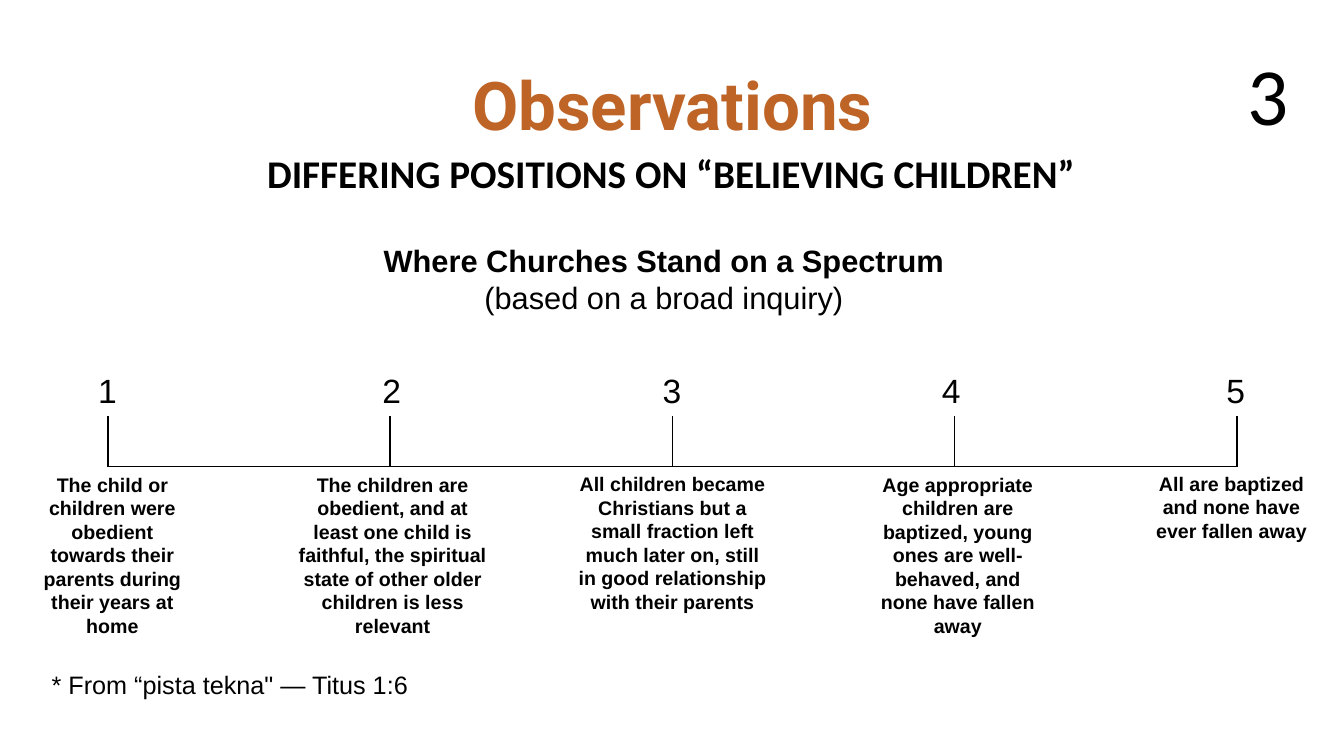
from pptx import Presentation
from pptx import util as u
from pptx.dml.color import RGBColor
from pptx.enum import shapes, text
from pptx.oxml import xmlchemy

PX = 9144
INK = "000000"
RUST = "BE6427"

STEPS = [
    (0, -73, 155, 171, ["The child or children were obedient",
                        "towards their parents during their years at home"]),
    (2, -94, 193, 171, ["The children are obedient, and at least one child is faithful, "
                        "the spiritual state of other older children is less relevant"]),
    (0, -99, 198, 147, ["All children became Christians but a small fraction left much "
                        "later on, still in good relationship with their parents"]),
    (-3, -87, 180, 171, ["Age appropriate children are baptized, young ones are "
                         "well-behaved, and none have fallen away"]),
    (-1, -91, 171, 76, ["All are baptized and none have ever fallen away"]),
]


def px(n):
    return u.Emu(int(n * PX))


def hue(code):
    return RGBColor.from_string(code)


def put(obj, form):
    for key, val in form.items():
        setattr(obj, key, val)


def write(slide, box, lines, size, bold=False, face="Arial", tint=INK,
          wrap=True, grow=True, pad=3, mid=True):
    frame = slide.shapes.add_textbox(*map(px, box)).text_frame
    fit = text.MSO_AUTO_SIZE
    put(frame, {
        "word_wrap": wrap,
        "auto_size": fit.SHAPE_TO_FIT_TEXT if grow else fit.NONE,
        "vertical_anchor": text.MSO_ANCHOR.MIDDLE if mid else text.MSO_ANCHOR.TOP,
        **{"margin_" + side: px(pad) for side in ("left", "top", "right", "bottom")},
    })
    frame.text = "\n".join(lines)
    for para in frame.paragraphs:
        para.alignment = text.PP_ALIGN.CENTER if mid else text.PP_ALIGN.LEFT
        font = para.runs[0].font
        put(font, {"size": u.Pt(size), "bold": bold, "name": face})
        font.color.rgb = hue(tint)
    return frame


def rule(slide, x1, y1, x2, y2):
    line = slide.shapes.add_connector(
        shapes.MSO_CONNECTOR.STRAIGHT, *map(px, (x1, y1, x2, y2)))
    line.line.color.rgb = hue(INK)
    line.line.width = u.Pt(1)
    props = line._element.spPr
    props.append(xmlchemy.OxmlElement("a:effectLst"))


def header(slide, x, y, w):
    write(slide, (x + 9, y, 796, 154), ["Observations"], 48, True,
          "Roboto", RUST, grow=False, pad=0)
    label = {"face": "Calibri", "wrap": False, "pad": 5, "mid": False}
    write(slide, (x, y + 117, 813, 49),
          ["DIFFERING POSITIONS ON “BELIEVING CHILDREN”"], 28, True, **label)
    write(slide, (x + w - 52, y + 13, 52, 92), ["3"], 58, **label)


def intro(slide, x, y, w, h):
    frame = write(slide, (x, y, w, h),
                  ["Where Churches Stand on a Spectrum", "(based on a broad inquiry)"],
                  22, True, grow=False)
    frame.paragraphs[1].runs[0].font.bold = False


def scale(slide, x, y, w):
    base = y + 99
    gap = w / (len(STEPS) - 1)
    rule(slide, x, base, x + w, base)
    for i, (shift, left, wide, high, lines) in enumerate(STEPS):
        tick = x + i * gap
        rule(slide, tick, base, tick, base - 50)
        write(slide, (tick - 13 + shift, y, 25, 46), [str(i + 1)], 24, wrap=False)
        write(slide, (tick + left, base + 2, wide, high), lines, 14, True)


def footer(slide, x, y, w, h):
    write(slide, (x, y, w, h), ["* From “pista tekna\" — Titus 1:6"], 18, wrap=False)


def main():
    deck = Presentation()
    put(deck, {"slide_width": px(1333), "slide_height": px(750)})
    slide = deck.slides.add_slide(deck.slide_layouts[6])
    header(slide, 260, 26, 1024)
    intro(slide, 313, 214, 691, 125)
    scale(slide, 107, 364, 1120)
    footer(slide, 48, 661, 360, 36)
    deck.save("out.pptx")


if __name__ == "__main__":
    main()
